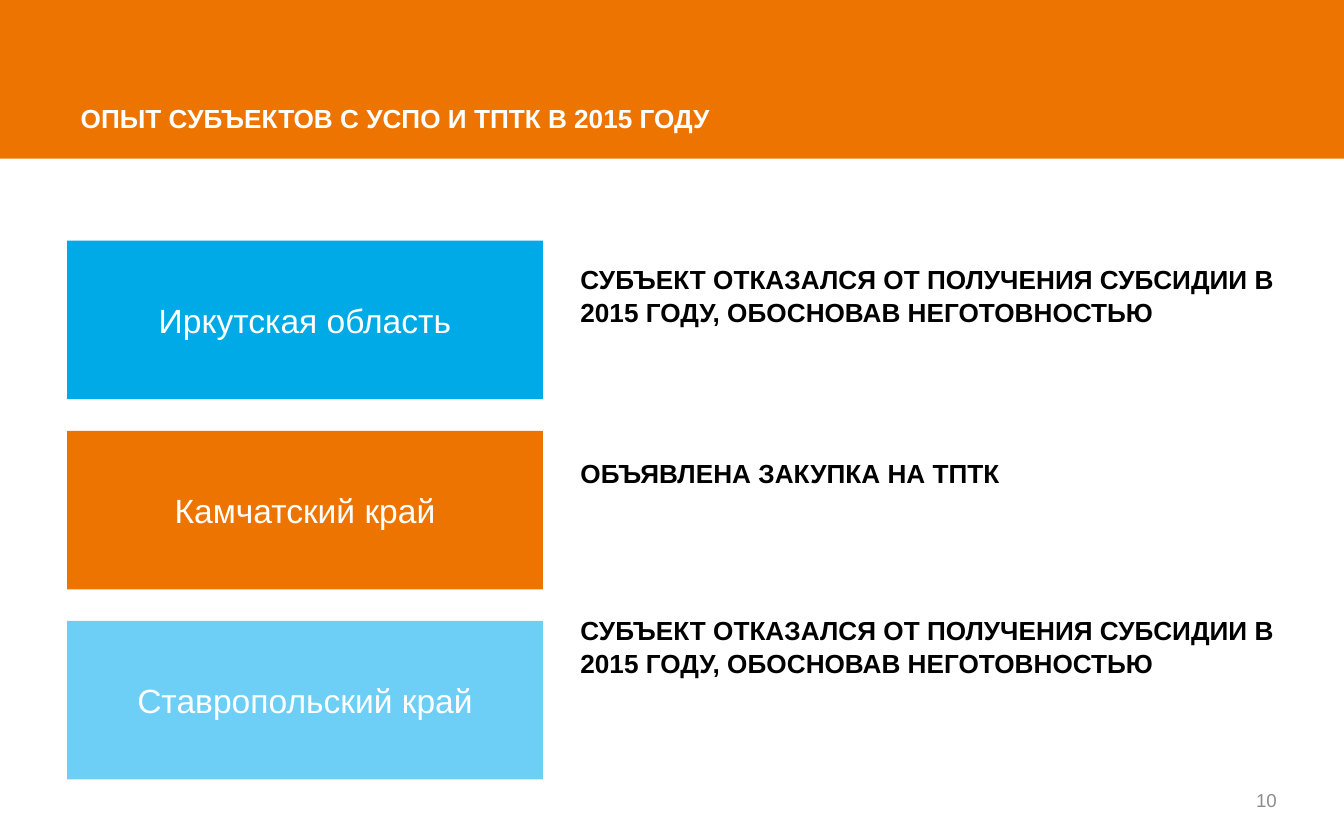
from dataclasses import dataclass

from pptx import Presentation
from pptx.dml.color import RGBColor
from pptx.enum.shapes import MSO_SHAPE as Shape
from pptx.enum.text import MSO_ANCHOR as Anchor, PP_ALIGN as Align
from pptx.util import Inches, Pt

COLORS = {
    "orange": "EE7400",
    "blue": "00AAE7",
    "sky": "6DCFF6",
    "white": "FFFFFF",
    "black": "000000",
    "gray": "8C8C8C",
}
FONT = "Arial"
LEFT = 0.5
BLOCK_HEIGHT = 1.18
FIRST_TOP, LAST_TOP = 1.79, 4.62
REFUSED = "СУБЪЕКТ ОТКАЗАЛСЯ ОТ ПОЛУЧЕНИЯ СУБСИДИИ В 2015 ГОДУ, ОБОСНОВАВ НЕГОТОВНОСТЬЮ"


@dataclass
class Region:
    name: str
    color: str
    status: str
    status_top: float


REGIONS = [
    Region("Иркутская область", "blue", REFUSED, 1.95),
    Region("Камчатский край", "orange", "ОБЪЯВЛЕНА ЗАКУПКА НА ТПТК", 3.39),
    Region("Ставропольский край", "sky", REFUSED, 4.56),
]


def write(shape, text: str, size: float, color: str, bold: bool = False,
          align: Align = Align.LEFT, anchor: Anchor = Anchor.MIDDLE):
    """Put one formatted paragraph into the shape and return it."""
    frame = shape.text_frame
    frame.word_wrap = True
    frame.vertical_anchor = anchor
    para = frame.paragraphs[0]
    para.text = text
    para.alignment = align
    para.font.name = FONT
    para.font.size = Pt(size)
    para.font.bold = bold
    para.font.color.rgb = RGBColor.from_string(COLORS[color])
    return para


def add_block(page, left: float, top: float, width: float, color: str):
    block = page.shapes.add_shape(Shape.RECTANGLE, Inches(left), Inches(top),
                                  Inches(width), Inches(BLOCK_HEIGHT))
    block.shadow.inherit = False
    block.fill.solid()
    block.fill.fore_color.rgb = RGBColor.from_string(COLORS[color])
    block.line.fill.background()
    return block


def add_box(page, left: float, top: float, width: float, height: float):
    box = page.shapes.add_textbox(Inches(left), Inches(top), Inches(width), Inches(height))
    box.text_frame.margin_top = box.text_frame.margin_bottom = 0
    return box


def add_title(page, text: str) -> None:
    title = page.shapes.title
    title.left, title.top = Inches(LEFT), Inches(0.71)
    title.width, title.height = Inches(7.67), Inches(0.34)
    write(title, text, 14, "white", bold=True)
    # Bring the title in front of the header band
    page.shapes._spTree.append(title._element)


def add_region(page, region: Region, top: float) -> None:
    block = add_block(page, LEFT, top, 3.54, region.color)
    write(block, region.name, 18, "white", align=Align.CENTER)
    status = add_box(page, 4.22, region.status_top, 5.61, 0.5)
    para = write(status, region.status, 14, "black", bold=True, anchor=Anchor.TOP)
    para.line_spacing = 1.05


def main() -> None:
    deck = Presentation()
    deck.slide_width, deck.slide_height = Inches(10), Inches(6.25)
    page = deck.slides.add_slide(deck.slide_layouts[5])

    add_block(page, 0, 0, 10, "orange")
    add_title(page, "ОПЫТ СУБЪЕКТОВ С УСПО И ТПТК В 2015 ГОДУ")

    pitch = (LAST_TOP - FIRST_TOP) / (len(REGIONS) - 1)
    for index, region in enumerate(REGIONS):
        add_region(page, region, FIRST_TOP + index * pitch)

    number = add_box(page, 7.17, 5.79, 2.33, 0.33)
    number.text_frame.margin_left = number.text_frame.margin_right = 0
    write(number, "10", 10, "gray", align=Align.RIGHT)

    deck.save("out.pptx")


if __name__ == "__main__":
    main()
